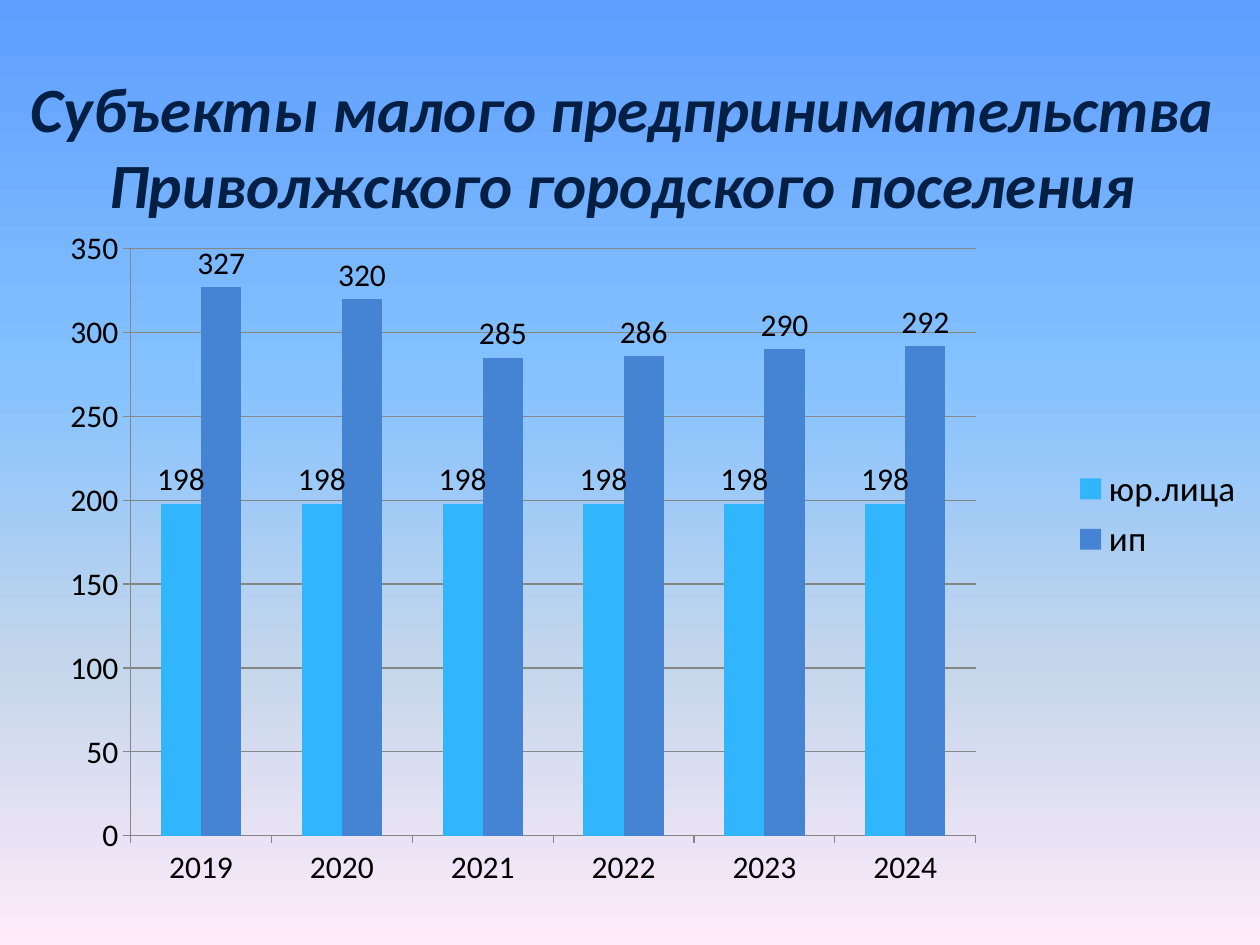
from dataclasses import dataclass

from lxml import etree
from pptx import Presentation
from pptx.chart.data import CategoryChartData
from pptx.dml.color import RGBColor
from pptx.enum.chart import XL_CHART_TYPE, XL_LABEL_POSITION, XL_LEGEND_POSITION, XL_TICK_MARK
from pptx.enum.text import MSO_ANCHOR, PP_ALIGN
from pptx.oxml import parse_xml
from pptx.oxml.ns import nsdecls, qn
from pptx.util import Cm, Pt

COLUMN = XL_CHART_TYPE.COLUMN_CLUSTERED
ABOVE = XL_LABEL_POSITION.OUTSIDE_END
RIGHT = XL_LEGEND_POSITION.RIGHT
OUT = XL_TICK_MARK.OUTSIDE
NONE = XL_TICK_MARK.NONE
MIDDLE = MSO_ANCHOR.MIDDLE
CENTER = PP_ALIGN.CENTER


@dataclass(frozen=True)
class Theme:
    font: str = "Calibri"
    title: str = "041F44"
    text: str = "000000"
    line: str = "868686"
    bars: tuple = ("31B6FD", "4584D3")
    sky: tuple = ((0, "5E9EFF"), (40, "85C2FF"), (70, "C4D6EB"), (100, "FFEBFA"))
    head: int = 36
    body: int = 18
    key: int = 20


theme = Theme()


def style(font, size, color):
    font.name = theme.font
    font.size = Pt(size)
    font.color.rgb = RGBColor.from_string(color)


deck = Presentation()
deck.slide_width, deck.slide_height = Cm(25.4), Cm(19.05)
slide = deck.slides.add_slide(deck.slide_layouts[6])

# Background: four-stop gradient from top to bottom
fill = slide.background.fill
fill.gradient()
fill.gradient_angle = 270
stops = slide.element.find(".//" + qn("a:gsLst"))
for stop in list(stops):
    stops.remove(stop)
for place, color in theme.sky:
    stop = etree.SubElement(stops, qn("a:gs"), pos=str(place * 1000))
    etree.SubElement(stop, qn("a:srgbClr"), val=color)

# Title
box = slide.shapes.add_textbox(Cm(0), Cm(0.53), Cm(25.1), Cm(4.8))
frame = box.text_frame
frame.word_wrap = True
frame.vertical_anchor = MIDDLE
frame.text = "Субъекты малого предпринимательства Приволжского городского поселения"
para = frame.paragraphs[0]
para.alignment = CENTER
run = para.runs[0]
style(run.font, theme.head, theme.title)
run.font.bold = run.font.italic = True

# Chart data
data = CategoryChartData()
data.categories = [str(year) for year in range(2019, 2025)]
data.add_series("юр.лица", [198] * 6)
data.add_series("ип", [327, 320, 285, 286, 290, 292])
chart = slide.shapes.add_chart(COLUMN, Cm(0.66), Cm(2.26), Cm(24.69), Cm(16.21), data).chart
style(chart.font, theme.body, theme.text)
chart.has_title = False

# Columns and their labels
plot = chart.plots[0]
plot.gap_width = 150
plot.overlap = 0
plot.vary_by_categories = False
for series, color in zip(plot.series, theme.bars):
    series.format.fill.solid()
    series.format.fill.fore_color.rgb = RGBColor.from_string(color)
    labels = series.data_labels
    labels.show_value = True
    labels.position = ABOVE
    style(labels.font, theme.body, theme.text)

# Axes
scale = chart.value_axis
scale.minimum_scale, scale.maximum_scale, scale.major_unit = 0, 350, 50
scale.has_major_gridlines = True
for axis in (chart.category_axis, scale):
    axis.major_tick_mark = OUT
    axis.minor_tick_mark = NONE
    style(axis.tick_labels.font, theme.body, theme.text)
for part in (chart.category_axis, scale, scale.major_gridlines):
    part.format.line.color.rgb = RGBColor.from_string(theme.line)
    part.format.line.width = Pt(0.75)

# Legend
chart.has_legend = True
chart.legend.position = RIGHT
chart.legend.include_in_layout = False
style(chart.legend.font, theme.key, theme.text)

# Plot area position, as shares of the chart
area = chart.element.find(".//" + qn("c:plotArea"))
for old in area.findall(qn("c:layout")):
    area.remove(old)
sides = {"x": 0.08, "y": 0.17, "w": 0.69, "h": 0.73}
rules = "".join(f'<c:{side}Mode val="edge"/>' for side in "xy")
rules += "".join(f'<c:{side} val="{share}"/>' for side, share in sides.items())
area.insert(0, parse_xml(
    f'<c:layout {nsdecls("c")}><c:manualLayout><c:layoutTarget val="inner"/>'
    f'{rules}</c:manualLayout></c:layout>'))

deck.save("out.pptx")
